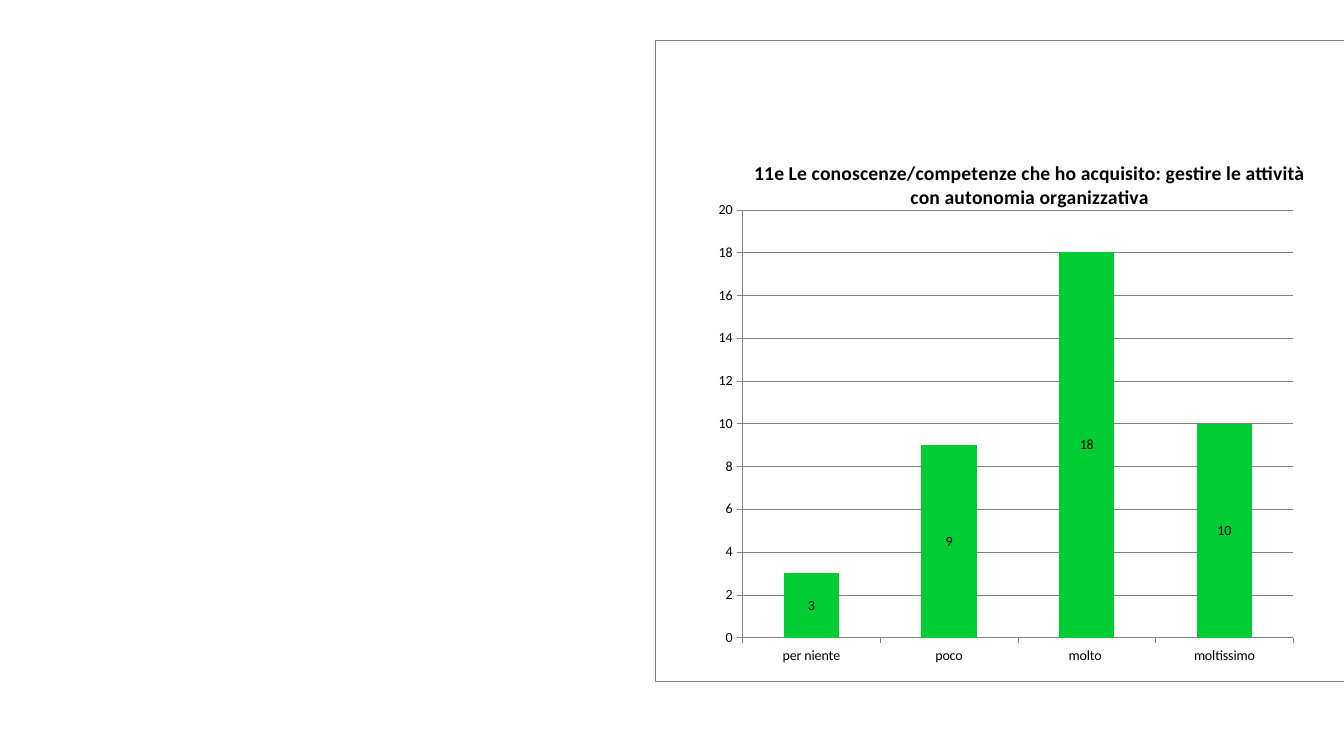
from dataclasses import dataclass

from lxml import etree
from pptx import Presentation
from pptx.chart.data import CategoryChartData
from pptx.dml.color import RGBColor
from pptx.enum.chart import XL_CHART_TYPE, XL_LABEL_POSITION, XL_TICK_MARK
from pptx.oxml import parse_xml
from pptx.oxml.ns import nsdecls, qn
from pptx.util import Cm, Pt

STACKED = XL_CHART_TYPE.COLUMN_STACKED
CENTER = XL_LABEL_POSITION.CENTER
TICK_OUT, TICK_NONE = XL_TICK_MARK.OUTSIDE, XL_TICK_MARK.NONE

BLACK, GREY, GREEN, WHITE = "000000", "808080", "00CC33", "FFFFFF"
LINE_WIDTH = 0.25
TITLE = ("11e Le conoscenze/competenze che ho acquisito: "
         "gestire le attività con autonomia organizzativa")


@dataclass
class Answer:
    label: str
    count: int


ANSWERS = [
    Answer("per niente", 3),
    Answer("poco", 9),
    Answer("molto ", 18),
    Answer("moltissimo", 10),
]


def rgb(color: str) -> RGBColor:
    return RGBColor.from_string(color)


def set_font(font, size: float, bold: bool = False, name: str = "Calibri") -> None:
    for key, value in {"name": name, "size": Pt(size), "bold": bold}.items():
        setattr(font, key, value)
    font.color.rgb = rgb(BLACK)


def set_line(line) -> None:
    line.color.rgb = rgb(GREY)
    line.width = Pt(LINE_WIDTH)


def set_layout(parent, index: int, **places: float) -> None:
    """Give a chart part a manual layout, in fractions of the chart."""
    for old in parent.findall(qn("c:layout")):
        parent.remove(old)
    layout = parse_xml(f"<c:layout {nsdecls('c')}><c:manualLayout/></c:layout>")
    settings = {"xMode": "edge", "yMode": "edge", **places}
    if "w" in places:
        settings = {"layoutTarget": "inner", **settings}
    for tag, value in settings.items():
        etree.SubElement(layout[0], qn(f"c:{tag}")).set("val", str(value))
    parent.insert(index, layout)


def set_frame(chart) -> None:
    """Fill the chart area and draw its border."""
    frame = parse_xml(
        f'<c:spPr {nsdecls("c", "a")}>'
        f'<a:solidFill><a:srgbClr val="{WHITE}"/></a:solidFill>'
        f'<a:ln w="{Pt(LINE_WIDTH)}"><a:solidFill><a:srgbClr val="{GREY}"/>'
        "</a:solidFill></a:ln></c:spPr>")
    chart.element.find(qn("c:chart")).addnext(frame)


def format_axis(axis) -> None:
    marks = {"major_tick_mark": TICK_OUT, "minor_tick_mark": TICK_NONE}
    for key, value in marks.items():
        setattr(axis, key, value)
    set_font(axis.tick_labels.font, 10)
    set_line(axis.format.line)


def add_answer_chart(slide) -> None:
    data = CategoryChartData()
    data.categories = [answer.label for answer in ANSWERS]
    data.add_series("Series 1", [answer.count for answer in ANSWERS])
    chart = slide.shapes.add_chart(
        STACKED, Cm(16.51), Cm(1.02), Cm(18.47), Cm(16.15), data).chart
    chart.has_legend = False
    set_font(chart.font, 10, name="Arial")
    set_frame(chart)

    # Title
    title = chart.chart_title
    p = title.text_frame.paragraphs[0]
    r = p.add_run()
    r.text = TITLE
    set_font(r.font, 14, bold=True)
    title.include_in_layout = False
    set_layout(title._element, 1, x=0.13, y=0.18)

    # Axes
    for axis in (chart.category_axis, chart.value_axis):
        format_axis(axis)
    value_axis = chart.value_axis
    scale = {"minimum_scale": 0, "maximum_scale": 20, "major_unit": 2,
             "has_major_gridlines": True}
    for key, value in scale.items():
        setattr(value_axis, key, value)
    set_line(value_axis.major_gridlines.format.line)

    # Columns and their labels
    plot = chart.plots[0]
    bars = {"gap_width": 150, "overlap": 100, "vary_by_categories": False}
    for key, value in bars.items():
        setattr(plot, key, value)
    series = plot.series[0]
    series.format.fill.solid()
    series.format.fill.fore_color.rgb = rgb(GREEN)
    labels = series.data_labels
    labels.show_value = True
    labels.position = CENTER
    set_font(labels.font, 10)
    plot_area = chart.element.find(".//" + qn("c:plotArea"))
    set_layout(plot_area, 0, x=0.119, y=0.264, w=0.752, h=0.668)


def main() -> None:
    prs = Presentation()
    prs.slide_width, prs.slide_height = Cm(33.87), Cm(19.05)
    slide = prs.slides.add_slide(prs.slide_layouts[6])
    add_answer_chart(slide)
    prs.save("out.pptx")


if __name__ == "__main__":
    main()
